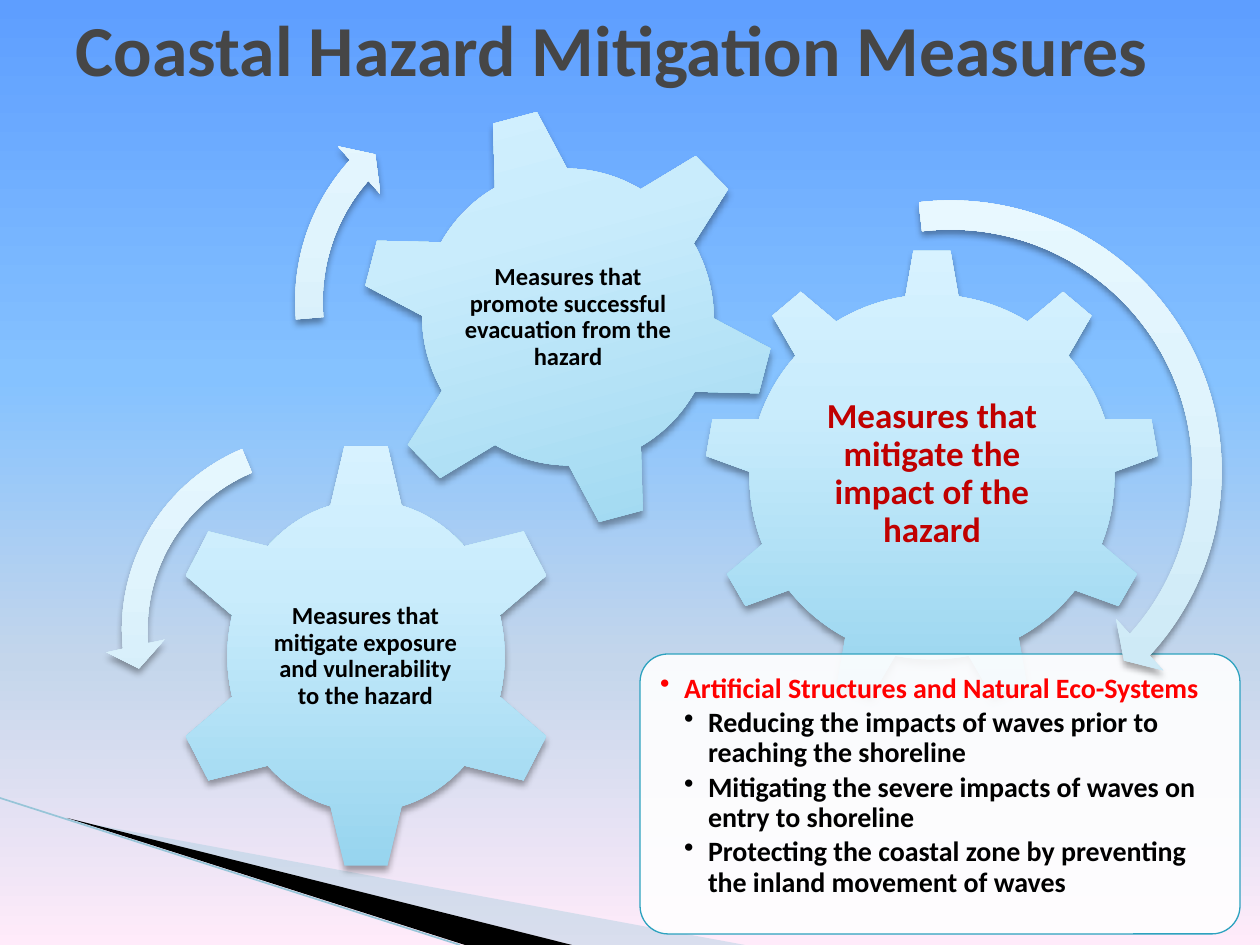
from lxml import etree
from pptx import Presentation
from pptx.dml.color import RGBColor
from pptx.enum.shapes import MSO_CONNECTOR, MSO_SHAPE
from pptx.enum.text import MSO_ANCHOR, PP_ALIGN
from pptx.oxml.ns import qn
from pptx.util import Emu, Pt

STRAIGHT = MSO_CONNECTOR.STRAIGHT
GEAR_6, GEAR_9 = MSO_SHAPE.GEAR_6, MSO_SHAPE.GEAR_9
ROUNDED = MSO_SHAPE.ROUNDED_RECTANGLE
CLOCKWISE = MSO_SHAPE.CIRCULAR_ARROW
COUNTERCLOCKWISE = MSO_SHAPE.LEFT_CIRCULAR_ARROW
TOP, MIDDLE = MSO_ANCHOR.TOP, MSO_ANCHOR.MIDDLE
LEFT, CENTER = PP_ALIGN.LEFT, PP_ALIGN.CENTER

BLACK = RGBColor(0x00, 0x00, 0x00)
WHITE = RGBColor(0xFF, 0xFF, 0xFF)
TITLE_GRAY = RGBColor(0x46, 0x46, 0x46)
DARK_RED = RGBColor(0xC0, 0x00, 0x00)
RED = RGBColor(0xFF, 0x00, 0x00)
TEAL = RGBColor(0x2D, 0xA2, 0xBF)
PALE_TEAL = RGBColor(0xA0, 0xCB, 0xDC)
EDGE_TEAL = RGBColor(0x97, 0xC5, 0xD8)

SKY = [(0, RGBColor(0x5E, 0x9E, 0xFF)), (40, RGBColor(0x85, 0xC2, 0xFF)),
       (70, RGBColor(0xC4, 0xD6, 0xEB)), (100, RGBColor(0xFF, 0xEB, 0xFA))]
GEAR_BLUE = [(0, RGBColor(0x96, 0xD4, 0xEE)), (65, RGBColor(0xC9, 0xEC, 0xFC)),
             (100, RGBColor(0xD7, 0xF2, 0xFF))]
ARROW_BLUE = [(0, RGBColor(0xC7, 0xE6, 0xF4)), (65, RGBColor(0xE0, 0xF4, 0xFD)),
              (100, RGBColor(0xE8, 0xF8, 0xFF))]

EMU_PER_PX = 914400 / 126


def px(length):
    return Emu(round(length * EMU_PER_PX))


def add_child(parent, tag, **attributes):
    child = etree.SubElement(parent, qn(tag))
    for key, value in attributes.items():
        child.set(key, str(value))
    return child


class SlideBuilder:
    font_name = "Calibri"
    bullet = "•"
    bullet_indent = 24

    def __init__(self, slide):
        self.slide = slide
        self.shapes = slide.shapes

    def gradient(self, fill, owner, stops, angle):
        fill.gradient()
        gradient = next(owner.iter(qn("a:gradFill")))
        stop_list = gradient.find(qn("a:gsLst"))
        for old_stop in list(stop_list):
            stop_list.remove(old_stop)
        for percent, color in stops:
            stop = add_child(stop_list, "a:gs", pos=percent * 1000)
            add_child(stop, "a:srgbClr", val=color)
        gradient.find(qn("a:lin")).set("ang", str(angle * 60000))

    def background(self, stops):
        self.gradient(self.slide.background.fill, self.slide.element, stops, 90)

    def solid(self, shape, color, opacity=100):
        shape.shadow.inherit = False
        shape.fill.solid()
        shape.fill.fore_color.rgb = color
        if opacity < 100:
            rgb = next(shape.element.spPr.iter(qn("a:srgbClr")))
            add_child(rgb, "a:alpha", val=opacity * 1000)

    def wedge(self, points, color, opacity=100):
        outline = self.shapes.build_freeform(*points[0], scale=EMU_PER_PX)
        outline.add_line_segments(points[1:], close=True)
        shape = outline.convert_to_shape()
        self.solid(shape, color, opacity)
        shape.line.fill.background()

    def line(self, x1, y1, x2, y2, color, width):
        connector = self.shapes.add_connector(STRAIGHT, px(x1), px(y1), px(x2), px(y2))
        connector.line.color.rgb = color
        connector.line.width = Pt(width)
        add_child(connector.element.spPr, "a:effectLst")

    def raised(self, kind, box, stops, rotation=0, adjustments=()):
        shape = self.shapes.add_shape(kind, *map(px, box))
        shape.rotation = rotation
        for index, value in enumerate(adjustments):
            shape.adjustments[index] = value
        self.gradient(shape.fill, shape.element.spPr, stops, 270)
        shape.line.fill.background()
        shape.shadow.inherit = False
        effects = shape.element.spPr.find(qn("a:effectLst"))
        shadow = add_child(effects, "a:outerShdw", blurRad=Pt(4), dist=Pt(3),
                           dir=5400000, rotWithShape=0)
        add_child(add_child(shadow, "a:srgbClr", val=BLACK), "a:alpha", val=35000)

    def panel(self, box):
        shape = self.shapes.add_shape(ROUNDED, *map(px, box))
        shape.adjustments[0] = 0.1
        self.solid(shape, WHITE, 90)
        shape.line.color.rgb = TEAL
        shape.line.width = Pt(0.75)

    def text_frame(self, box, anchor, inset_x, inset_y):
        frame = self.shapes.add_textbox(*map(px, box)).text_frame
        frame.word_wrap = True
        frame.vertical_anchor = anchor
        frame.margin_left = frame.margin_right = px(inset_x)
        frame.margin_top = frame.margin_bottom = px(inset_y)
        return frame

    def run(self, paragraph, text, size, color):
        run = paragraph.add_run()
        run.text = text
        run.font.name = self.font_name
        run.font.size = Pt(size)
        run.font.bold = True
        run.font.color.rgb = color

    def label(self, box, text, size, color, align=CENTER, spacing=0.9, insets=(3, 3)):
        paragraph = self.text_frame(box, MIDDLE, *insets).paragraphs[0]
        paragraph.alignment = align
        paragraph.line_spacing = spacing
        self.run(paragraph, text, size, color)

    def bullets(self, box, items, size):
        frame = self.text_frame(box, TOP, 11, 11)
        for index, (level, text, color) in enumerate(items):
            paragraph = frame.add_paragraph() if index else frame.paragraphs[0]
            paragraph.level = level
            paragraph.line_spacing = 0.9
            paragraph.space_after = Pt(2.4)
            properties = paragraph._p.get_or_add_pPr()
            properties.set("marL", str(px(self.bullet_indent * level)))
            properties.set("indent", str(-px(self.bullet_indent)))
            add_child(properties, "a:buChar", char=self.bullet)
            self.run(paragraph, text, size, color)


def main():
    deck = Presentation()
    deck.slide_width, deck.slide_height = px(1260), px(945)
    builder = SlideBuilder(deck.slides.add_slide(deck.slide_layouts[6]))

    builder.background(SKY)
    builder.wedge([(69, 820), (745, 945), (572, 945)], PALE_TEAL, 40)
    builder.wedge([(67, 818), (572, 945), (465, 945)], BLACK)
    builder.line(0, 798, 460, 945, EDGE_TEAL, 0.95)
    builder.label((63, -10, 1134, 116), "Coastal Hazard Mitigation Measures", 41,
                  TITLE_GRAY, LEFT, 1.0, (13, 6))

    builder.raised(GEAR_9, (704, 249, 456, 456), GEAR_BLUE)
    builder.label((796, 357, 272, 234), "Measures that mitigate the impact of the hazard",
                  20, DARK_RED)

    builder.panel((640, 654, 600, 280))
    builder.bullets((649, 663, 583, 263), [
        (1, "Artificial Structures and Natural Eco-Systems", RED),
        (2, "Reducing the impacts of waves prior to reaching the shoreline", BLACK),
        (2, "Mitigating the severe impacts of waves on entry to shoreline", BLACK),
        (2, "Protecting the coastal zone by preventing the inland movement of waves", BLACK),
    ], 16)

    builder.raised(GEAR_6, (168, 441, 396, 430), GEAR_BLUE)
    builder.label((267, 547, 197, 219),
                  "Measures that mitigate exposure and vulnerability to the hazard", 14, BLACK)
    builder.raised(GEAR_6, (360, 106, 416, 422), GEAR_BLUE, rotation=345.1)
    builder.label((451, 199, 234, 237),
                  "Measures that promote successful evacuation from the hazard", 14, BLACK)

    for kind, box, adjustments in [
        (CLOCKWISE, (659, 180, 583, 583), (0.05, 2.99, 25.48, 157.95, 0.06)),
        (COUNTERCLOCKWISE, (105, 417, 425, 425), (0.06, 4.3, 104.89, 148.38, 0.07)),
        (CLOCKWISE, (277, 73, 457, 457), (0.06, 3.94, 133.14, 105.08, 0.07)),
    ]:
        builder.raised(kind, box, ARROW_BLUE, adjustments=adjustments)

    deck.save("out.pptx")


if __name__ == "__main__":
    main()
